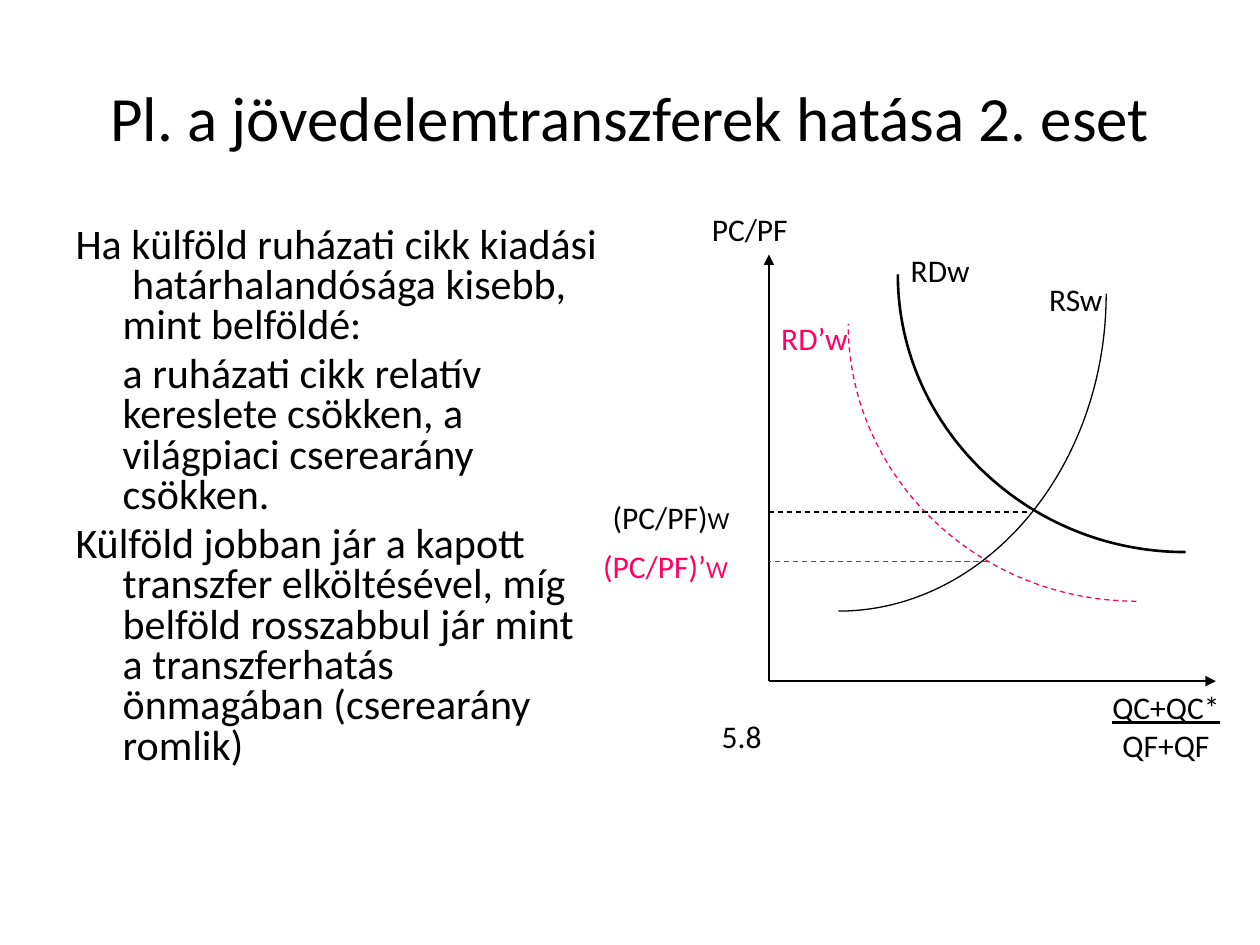
from lxml.etree import SubElement
from pptx import Presentation
from pptx.dml.color import RGBColor
from pptx.enum.dml import MSO_LINE
from pptx.enum.shapes import MSO_CONNECTOR as CONN
from pptx.enum.text import MSO_AUTO_SIZE as AUTO, PP_ALIGN as ALIGN
from pptx.oxml.ns import qn
from pptx.util import Cm, Pt

COLORS = {"ink": "000000", "shift": "FF0066"}
TITLE = "Pl. a jövedelemtranszferek hatása 2. eset"
# Text and whether its first line hangs to the left
BODY = [
    ("Ha külföld ruházati cikk kiadási  határhalandósága kisebb, mint belföldé:", True),
    ("a ruházati cikk relatív kereslete csökken, a világpiaci cserearány csökken.", False),
    ("Külföld jobban jár a kapott transzfer elköltésével, míg belföld rosszabbul "
     "jár mint a transzferhatás önmagában (cserearány romlik)", True),
]


class Deck:
    """Holds the style and the current slide."""

    font = "Calibri"
    label_size = 18
    index_size = 14
    thin = 0.75

    def __init__(self):
        self.prs = Presentation()
        self.prs.slide_width, self.prs.slide_height = Cm(25.4), Cm(19.05)
        self.s = self.prs.slides.add_slide(self.prs.slide_layouts[1])

    def color(self, name):
        return RGBColor.from_string(COLORS[name])

    def run(self, p, text, size, color="ink", underline=None):
        r = p.add_run()
        r.text = text
        r.font.name, r.font.size = self.font, Pt(size)
        r.font.color.rgb = self.color(color)
        r.font.underline = underline

    def place(self, sp, x, y, w, h):
        sp.left, sp.top, sp.width, sp.height = Cm(x), Cm(y), Cm(w), Cm(h)
        sp.text_frame.auto_size = AUTO.NONE
        return sp.text_frame

    def title(self, text, *box):
        p = self.place(self.s.shapes.title, *box).paragraphs[0]
        p.alignment = ALIGN.CENTER
        self.run(p, text, 36)

    def body(self, items, *box):
        tf = self.place(self.s.placeholders[1], *box)
        for i, (text, hanging) in enumerate(items):
            p = tf.add_paragraph() if i else tf.paragraphs[0]
            p.line_spacing = 0.8
            pPr = p._p.get_or_add_pPr()
            pPr.set("marL", str(Cm(0.95)))
            pPr.set("indent", str(Cm(-0.95) if hanging else 0))
            SubElement(pPr, qn("a:buNone"))
            self.run(p, text, 24)

    def label(self, text, x, y, w, color="ink", index=""):
        """Write a one-line label, with an optional smaller index letter."""
        tf = self.s.shapes.add_textbox(Cm(x), Cm(y), Cm(w), Cm(1.02)).text_frame
        tf.word_wrap = not index
        p = tf.paragraphs[0]
        self.run(p, text, self.label_size, color)
        if index:
            self.run(p, index, self.index_size, color)

    def fraction(self, top, bottom, x, y, w, h):
        tf = self.s.shapes.add_textbox(Cm(x), Cm(y), Cm(w), Cm(h)).text_frame
        tf.word_wrap = True
        for p, text, underline in ((tf.paragraphs[0], top, True),
                                   (tf.add_paragraph(), bottom, False)):
            p.alignment = ALIGN.CENTER
            self.run(p, text, self.label_size, underline=underline)

    def stroke(self, line, color, width, dashed):
        line.color.rgb = self.color(color)
        line.width = Pt(width)
        if dashed:
            line.dash_style = MSO_LINE.DASH

    def line(self, x1, y1, x2, y2, color="ink", dashed=False, arrow=False):
        c = self.s.shapes.add_connector(CONN.STRAIGHT, Cm(x1), Cm(y1), Cm(x2), Cm(y2))
        self.stroke(c.line, color, self.thin, dashed)
        if arrow:
            SubElement(c.line._get_or_add_ln(), qn("a:tailEnd"), type="triangle")
        SubElement(c._element.spPr, qn("a:effectLst"))

    def curve(self, x1, y1, x2, y2, color="ink", width=thin, dashed=False):
        """Draw a quarter ellipse that starts level and ends upright."""
        fb = self.s.shapes.build_freeform(Cm(x1), Cm(y1))
        fb.add_line_segments([(Cm(x2), Cm(y2))], close=False)
        sp = fb.convert_to_shape()
        bend = 0.55
        controls = [(x1 + bend * (x2 - x1), y1), (x2, y2 + bend * (y1 - y2)), (x2, y2)]
        segment = next(sp._element.iter(qn("a:lnTo")))
        bezier = segment.makeelement(qn("a:cubicBezTo"))
        segment.getparent().replace(segment, bezier)
        for x, y in controls:
            SubElement(bezier, qn("a:pt"), x=str(Cm(x) - sp.left), y=str(Cm(y) - sp.top))
        sp.shadow.inherit = False
        sp.fill.background()
        self.stroke(sp.line, color, width, dashed)


def main():
    deck = Deck()
    deck.title(TITLE, 1.27, 0.76, 22.86, 3.18)
    deck.body(BODY, 1.27, 4.45, 11.02, 12.67)

    x0, y0 = 15.5, 13.73
    deck.line(x0, y0, x0, 5.13, arrow=True)
    deck.line(x0, y0, 24.51, y0, arrow=True)

    deck.curve(22.91, 12.12, 17.1, 6.53, color="shift", dashed=True)
    deck.curve(16.9, 12.32, 22.3, 5.92)
    deck.curve(23.9, 11.13, 18.1, 5.53, width=1.5)
    deck.line(19.91, 11.32, x0, 11.32, color="shift", dashed=True)
    deck.line(20.7, 10.32, x0, 10.32, dashed=True)

    deck.label("PC/PF", 14.1, 4.11, 2.9)
    deck.label("RDw", 18.11, 4.93, 2.39)
    deck.label("RSw", 20.9, 5.53, 2.21)
    deck.label("RD’w", x0, 6.3, 2.39, color="shift")
    deck.label("(PC/PF)", 12.1, 9.91, 3.28, index="W")
    deck.label("(PC/PF)’", 11.91, 10.9, 3.05, color="shift", index="W")
    deck.label("5.8", 14.3, 14.33, 2.39)
    deck.fraction("QC+QC*", "QF+QF", 20.9, 13.74, 5.21, 1.78)

    deck.prs.save("out.pptx")


if __name__ == "__main__":
    main()
